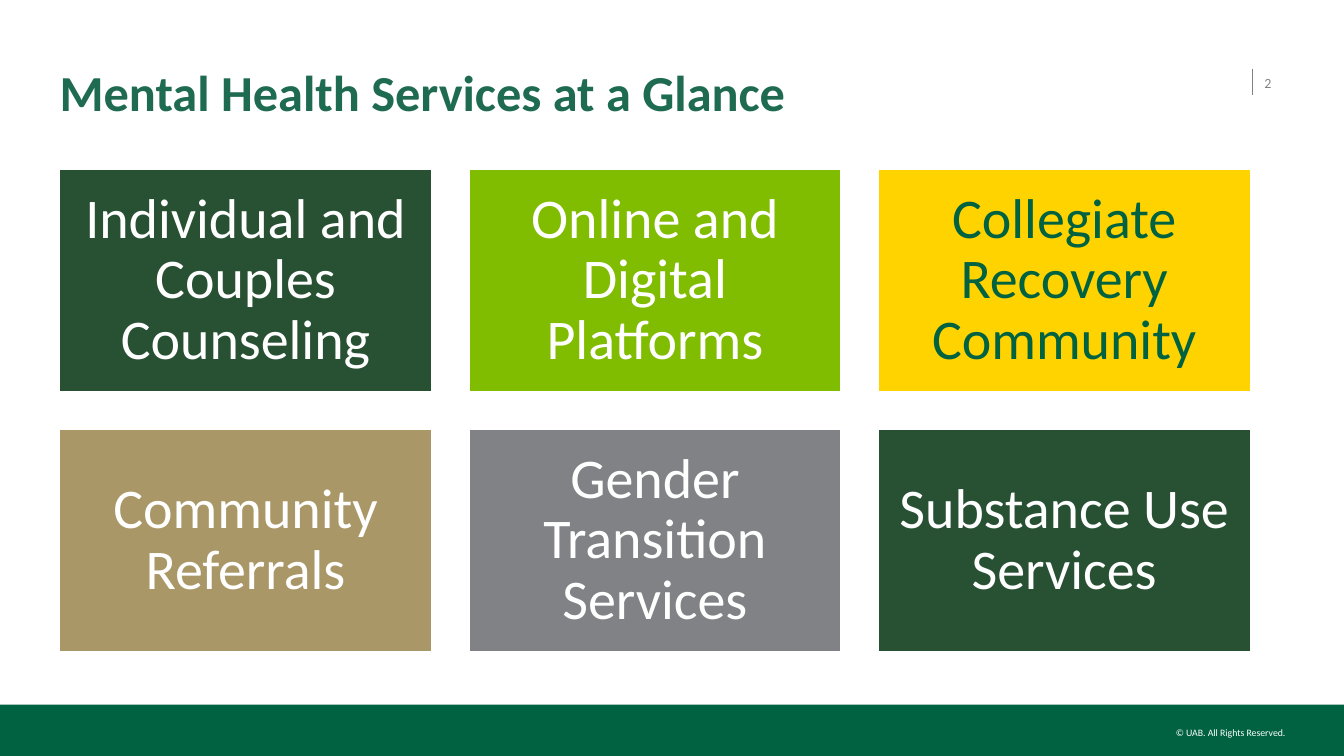
"""Build the slide of mental health services as a grid of coloured tiles."""
from lxml.etree import SubElement
from pptx import Presentation
from pptx.dml.color import RGBColor
from pptx.enum.shapes import MSO_CONNECTOR, MSO_SHAPE
from pptx.enum.text import MSO_ANCHOR, MSO_AUTO_SIZE, PP_ALIGN
from pptx.oxml.ns import qn
from pptx.util import Inches, Pt

WHITE = RGBColor(0xFF, 0xFF, 0xFF)
GREEN = RGBColor(0x00, 0x62, 0x41)
TEAL = RGBColor(0x1E, 0x6B, 0x51)
FOREST = RGBColor(0x28, 0x51, 0x34)
LIME = RGBColor(0x80, 0xBC, 0x00)
YELLOW = RGBColor(0xFF, 0xD3, 0x00)
SAND = RGBColor(0xAA, 0x97, 0x67)
GRAY = RGBColor(0x80, 0x82, 0x85)

TITLE = "Mental Health Services at a Glance"
RIGHTS = "© UAB. All Rights Reserved."
NUMBER = "2"
TILES = [
    ("Individual and Couples Counseling", FOREST, WHITE),
    ("Online and Digital Platforms", LIME, WHITE),
    ("Collegiate Recovery Community", YELLOW, GREEN),
    ("Community Referrals", SAND, WHITE),
    ("Gender Transition Services", GRAY, WHITE),
    ("Substance Use Services", FOREST, WHITE),
]

WIDE, HIGH = 13.33, 7.5
COLS = 3
LEFT, TOP = 0.59, 1.68
TILE_W, TILE_H, GAP = 3.69, 2.21, 0.37
BAND_H = 0.51
RULE_X = 12.42


def write(shape, text, size, color, bold=False, align=PP_ALIGN.LEFT,
          anchor=MSO_ANCHOR.MIDDLE, inset=0, spacing=1.0, wrap=True):
    """Put one formatted paragraph into a shape."""
    frame = shape.text_frame
    frame.auto_size = MSO_AUTO_SIZE.NONE
    frame.word_wrap = wrap
    frame.vertical_anchor = anchor
    frame.margin_left = frame.margin_right = Inches(inset)
    frame.margin_top = frame.margin_bottom = Inches(inset)
    frame.text = text
    para = frame.paragraphs[0]
    para.alignment = align
    para.line_spacing = spacing
    font = para.runs[0].font
    font.name, font.size, font.bold = "Calibri", Pt(size), bold
    font.color.rgb = color


def block(slide, box, fill, line=None):
    """Add a flat rectangle."""
    shape = slide.shapes.add_shape(MSO_SHAPE.RECTANGLE, *map(Inches, box))
    shape.shadow.inherit = False
    shape.fill.solid()
    shape.fill.fore_color.rgb = fill
    if line is None:
        shape.line.fill.background()
    else:
        shape.line.color.rgb = line
        shape.line.width = Pt(1)
    return shape


def main():
    """Lay out the slide and save it."""
    deck = Presentation()
    deck.slide_width, deck.slide_height = Inches(WIDE), Inches(HIGH)
    slide = deck.slides.add_slide(deck.slide_layouts[5])
    shapes = slide.shapes

    rule = shapes.add_connector(MSO_CONNECTOR.STRAIGHT, Inches(RULE_X),
                                Inches(0.68), Inches(RULE_X), Inches(0.94))
    rule.line.color.rgb = GRAY
    rule.line.width = Pt(1)
    SubElement(rule._element.spPr, qn("a:effectLst"))

    block(slide, (0, HIGH - BAND_H, WIDE, BAND_H), GREEN)
    rights = shapes.add_textbox(*map(Inches, (11.55, 7.21, 1.2, 0.12)))
    write(rights, RIGHTS, 7, WHITE, align=PP_ALIGN.RIGHT,
          anchor=MSO_ANCHOR.TOP, wrap=False)
    number = shapes.add_textbox(*map(Inches, (12.54, 0.62, 0.33, 0.4)))
    write(number, NUMBER, 10, GRAY)

    title = shapes.title
    title.left, title.top = Inches(LEFT), Inches(0.52)
    title.width, title.height = Inches(11.63), Inches(0.84)
    write(title, TITLE, 36, TEAL, bold=True, spacing=0.9)

    for index, (name, fill, ink) in enumerate(TILES):
        row, col = divmod(index, COLS)
        box = (LEFT + col * (TILE_W + GAP), TOP + row * (TILE_H + GAP),
               TILE_W, TILE_H)
        tile = block(slide, box, fill, line=WHITE)
        write(tile, name, 40, ink, align=PP_ALIGN.CENTER, inset=0.17,
              spacing=0.9)

    deck.save("out.pptx")


if __name__ == "__main__":
    main()
